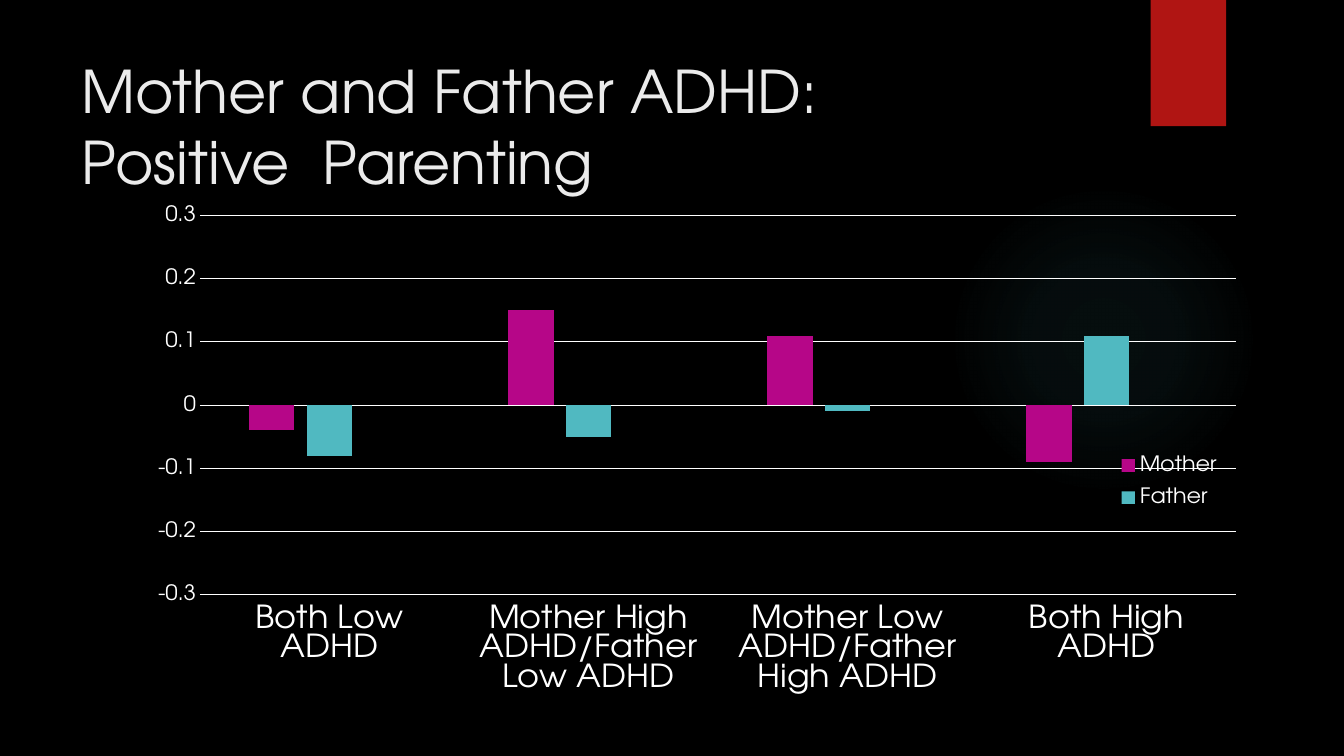
from dataclasses import dataclass

from pptx import Presentation
from pptx import util as u
from pptx.chart import data as chart_data
from pptx.dml.color import RGBColor
from pptx.enum import chart as chart_enum
from pptx.enum import shapes, text
from pptx.oxml import parse_xml
from pptx.oxml.ns import nsdecls, qn

BLACK = RGBColor(0x00, 0x00, 0x00)
WHITE = RGBColor(0xFF, 0xFF, 0xFF)
PALE_GREY = RGBColor(0xEB, 0xEB, 0xEB)
RED = RGBColor(0xB0, 0x15, 0x13)
MAGENTA = RGBColor(0xB6, 0x06, 0x88)
TEAL = RGBColor(0x50, 0xB9, 0xC1)
YELLOW = RGBColor(0xE6, 0xB7, 0x29)
FONT = "TeX Gyre Adventor"
GRID_STEP = 0.1
STEPS_EACH_WAY = 3

CATEGORIES = (
    "Both Low ADHD",
    "Mother High ADHD/Father Low ADHD",
    "Mother Low ADHD/Father High ADHD",
    "Both High ADHD",
)


@dataclass(frozen=True)
class Box:
    left: float
    top: float
    width: float
    height: float

    def lengths(self) -> tuple:
        return tuple(u.Cm(n) for n in (self.left, self.top, self.width, self.height))


@dataclass(frozen=True)
class Parent:
    name: str
    values: tuple
    color: RGBColor


@dataclass(frozen=True)
class Decoration:
    preset: int
    box: Box
    color: RGBColor
    glow: tuple = ()


PARENTS = (
    Parent("Mother", (-0.04, 0.15, 0.11, -0.09), MAGENTA),
    Parent("Father", (-0.08, -0.05, -0.01, 0.11), TEAL),
    Parent("Series 3", (None,) * len(CATEGORIES), YELLOW),
)
DECORATIONS = (
    Decoration(shapes.MSO_SHAPE.OVAL, Box(23.9, 4.65, 7.82, 7.82), TEAL,
               ((0, 7), (36, 6), (69, 0))),
    Decoration(shapes.MSO_SHAPE.RECTANGLE, Box(29, 0, 1.9, 3.18), RED),
)
TITLE_BOX = Box(1.8, 1.22, 26.14, 3.89)
CHART_BOX = Box(3.07, 5.16, 28.09, 12.34)
PLOT_AREA = Box(0.07, 0.023, 0.93, 0.819)
LEGEND_AREA = Box(0.89, 0.515, 0.1, 0.165)


def set_font(font, size: float, color: RGBColor) -> None:
    font.name = FONT
    font.size = u.Pt(size)
    font.color.rgb = color


def set_line(line, color: RGBColor) -> None:
    line.color.rgb = color
    line.width = u.Pt(0.75)


def draw_decoration(slide, decoration: Decoration) -> None:
    shape = slide.shapes.add_shape(decoration.preset, *decoration.box.lengths())
    shape.shadow.inherit = False
    shape.line.fill.background()
    if not decoration.glow:
        shape.fill.solid()
        shape.fill.fore_color.rgb = decoration.color
        return
    shape.fill.background()
    stops = "".join(
        f'<a:gs pos="{position * 1000}"><a:srgbClr val="{decoration.color}">'
        f'<a:alpha val="{alpha * 1000}"/></a:srgbClr></a:gs>'
        for position, alpha in decoration.glow
    )
    gradient = parse_xml(
        f'<a:gradFill {nsdecls("a")} rotWithShape="1"><a:gsLst>{stops}</a:gsLst>'
        '<a:path path="circle"><a:fillToRect l="50000" t="50000" r="50000" b="50000"/>'
        "</a:path></a:gradFill>"
    )
    properties = shape._element.spPr
    properties.replace(properties.find(qn("a:noFill")), gradient)


def place(element, area: Box, index: int, inner: bool = False) -> None:
    for layout in element.findall(qn("c:layout")):
        element.remove(layout)
    target = '<c:layoutTarget val="inner"/>' if inner else ""
    element.insert(index, parse_xml(
        f'<c:layout {nsdecls("c")}><c:manualLayout>{target}'
        '<c:xMode val="edge"/><c:yMode val="edge"/>'
        f'<c:x val="{area.left}"/><c:y val="{area.top}"/>'
        f'<c:w val="{area.width}"/><c:h val="{area.height}"/>'
        "</c:manualLayout></c:layout>"
    ))


def format_axes(chart) -> None:
    category_axis, value_axis = chart.category_axis, chart.value_axis
    for axis, size in ((category_axis, 24), (value_axis, 16)):
        axis.major_tick_mark = chart_enum.XL_TICK_MARK.NONE
        axis.minor_tick_mark = chart_enum.XL_TICK_MARK.NONE
        set_font(axis.tick_labels.font, size, WHITE)
    category_axis.tick_label_position = chart_enum.XL_TICK_LABEL_POSITION.LOW
    set_line(category_axis.format.line, WHITE)
    value_axis.minimum_scale = -STEPS_EACH_WAY * GRID_STEP
    value_axis.maximum_scale = STEPS_EACH_WAY * GRID_STEP
    value_axis.major_unit = GRID_STEP
    value_axis.tick_labels.number_format = "General"
    value_axis.tick_labels.number_format_is_linked = True
    value_axis.format.line.fill.background()
    set_line(value_axis.major_gridlines.format.line, WHITE)


def format_legend(chart) -> None:
    chart.has_legend = True
    legend = chart.legend
    legend.position = chart_enum.XL_LEGEND_POSITION.RIGHT
    legend.include_in_layout = False
    set_font(legend.font, 16, WHITE)
    element = legend._element
    place(element, LEGEND_AREA, 1)
    element.insert(1, parse_xml(
        f'<c:legendEntry {nsdecls("c")}><c:idx val="2"/><c:delete val="1"/></c:legendEntry>'
    ))


def draw_chart(slide) -> None:
    figures = chart_data.CategoryChartData()
    figures.categories = CATEGORIES
    for parent in PARENTS:
        figures.add_series(parent.name, parent.values)
    chart = slide.shapes.add_chart(
        chart_enum.XL_CHART_TYPE.COLUMN_CLUSTERED, *CHART_BOX.lengths(), figures
    ).chart
    chart.has_title = False
    set_font(chart.font, 16, WHITE)
    plot = chart.plots[0]
    plot.vary_by_categories = False
    plot.gap_width, plot.overlap = 219, -27
    for series, parent in zip(plot.series, PARENTS):
        series.invert_if_negative = False
        series.format.fill.solid()
        series.format.fill.fore_color.rgb = parent.color
    format_axes(chart)
    format_legend(chart)
    place(chart._chartSpace.chart.plotArea, PLOT_AREA, 0, inner=True)


def draw_title(slide) -> None:
    title = slide.shapes.title
    title.left, title.top, title.width, title.height = TITLE_BOX.lengths()
    frame = title.text_frame
    frame.text = "Mother and Father ADHD: \vPositive  Parenting"
    frame.word_wrap = True
    frame.auto_size = text.MSO_AUTO_SIZE.NONE
    frame.vertical_anchor = text.MSO_ANCHOR.MIDDLE
    paragraph = frame.paragraphs[0]
    paragraph.alignment = text.PP_ALIGN.LEFT
    for run in paragraph.runs:
        set_font(run.font, 42, PALE_GREY)


def main() -> None:
    presentation = Presentation()
    presentation.slide_width = u.Cm(33.87)
    presentation.slide_height = u.Cm(19.05)
    slide = presentation.slides.add_slide(presentation.slide_layouts[5])
    slide.background.fill.solid()
    slide.background.fill.fore_color.rgb = BLACK
    for decoration in DECORATIONS:
        draw_decoration(slide, decoration)
    draw_title(slide)
    draw_chart(slide)
    presentation.save("out.pptx")


if __name__ == "__main__":
    main()
